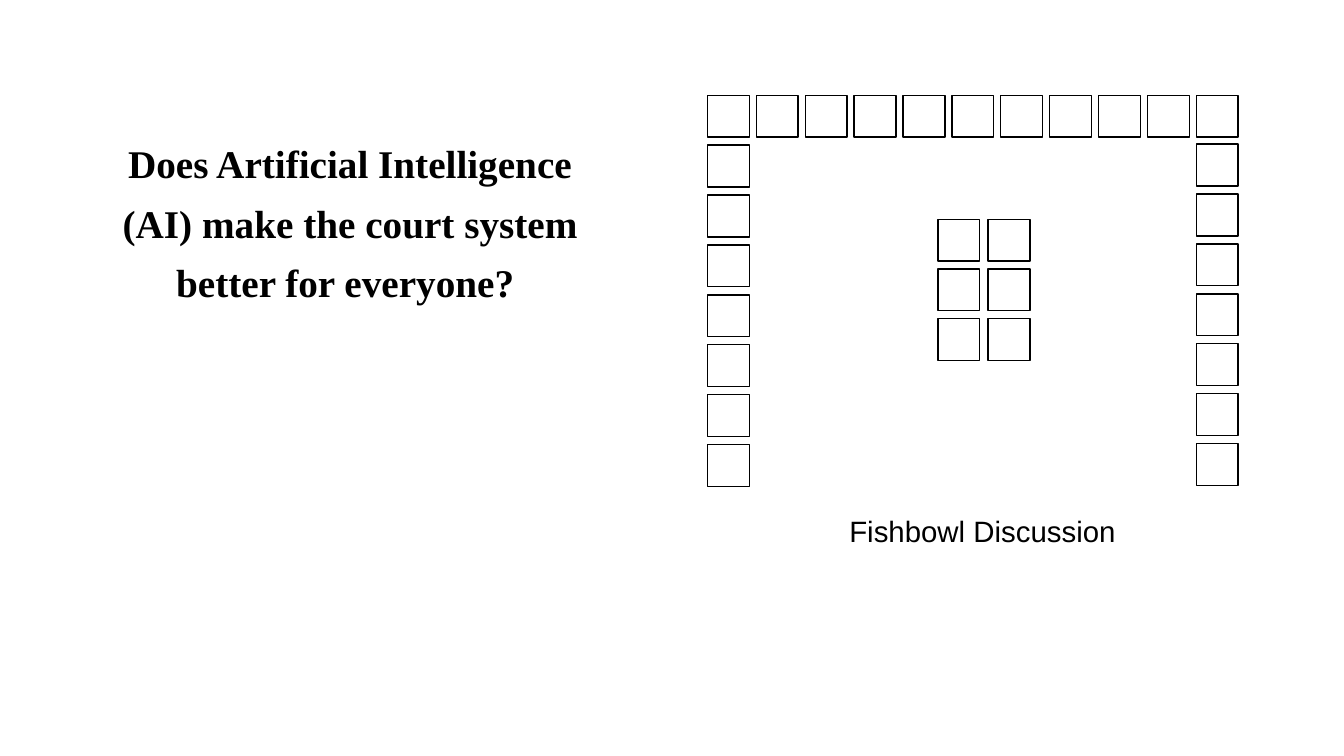
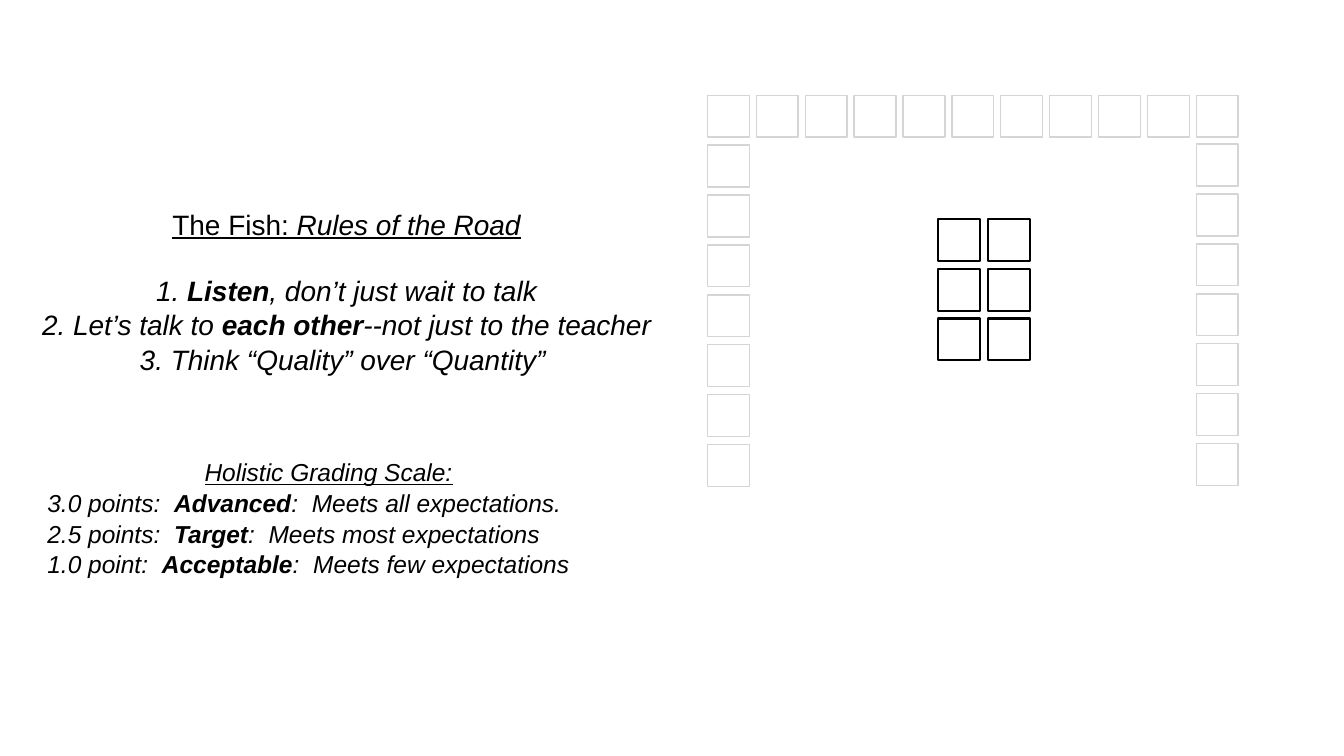
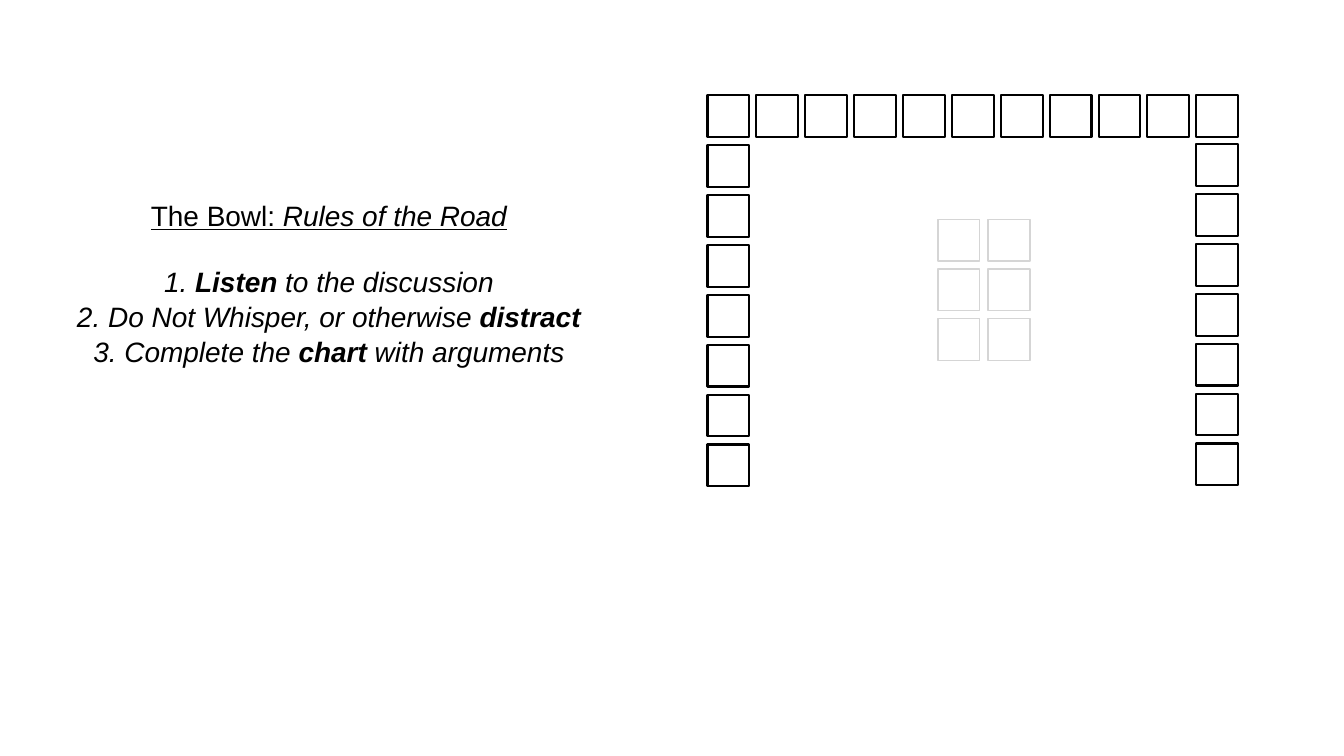
from dataclasses import dataclass
from itertools import product

from lxml.etree import SubElement
from pptx import Presentation
from pptx.dml.color import RGBColor
from pptx.enum.shapes import MSO_SHAPE
from pptx.enum.text import MSO_ANCHOR, MSO_AUTO_SIZE, PP_ALIGN
from pptx.oxml.ns import qn
from pptx.util import Inches, Pt


@dataclass(frozen=True)
class Theme:
    ink: RGBColor = RGBColor.from_string("000000")
    pale: RGBColor = RGBColor.from_string("D5D5D5")
    paper: RGBColor = RGBColor.from_string("FFFFFF")
    sans: str = "Arial"
    serif: str = "Times New Roman"
    ask: Pt = Pt(56)
    label: Pt = Pt(42)
    rule: Pt = Pt(40)
    grade: Pt = Pt(35)
    thin: Pt = Pt(2)
    thick: Pt = Pt(3)
    lead: float = 1.04


SEAT = 0.83
STEP = 0.97
ROW = 0.99
LEFT, TOP = 14.04, 1.89
RIGHT = LEFT + 10 * STEP

BOWL = (
    [(LEFT + STEP * i, TOP) for i in range(11)]
    + [(LEFT, TOP + ROW * i) for i in range(1, 8)]
    + [(RIGHT, TOP + STEP + ROW * i) for i in range(7)]
)
FISH = [(18.61 + c, 4.35 + 0.985 * r) for c, r in product(range(2), range(3))]

FLAGS = {"b": "bold", "i": "italic", "u": "underline"}


def apply(item, values):
    for name, value in values.items():
        setattr(item, name, value)


class Deck:
    def __init__(self, theme):
        self.theme = theme
        self.file = Presentation()
        apply(self.file, {"slide_width": Inches(26.67), "slide_height": Inches(15)})
        self.slide = None

    def page(self, layout):
        self.slide = self.file.slides.add_slide(self.file.slide_layouts.get_by_name(layout))

    def fill(self, shape, box, lines, size, font=None, lead=None, align=PP_ALIGN.CENTER, wrap=True):
        names = ("left", "top", "width", "height")
        apply(shape, dict(zip(names, map(Inches, box))))
        frame = shape.text_frame
        pad = Inches(0.06)
        apply(frame, {
            "word_wrap": wrap, "auto_size": MSO_AUTO_SIZE.NONE,
            "vertical_anchor": MSO_ANCHOR.MIDDLE,
            "margin_left": pad, "margin_right": pad,
            "margin_top": pad, "margin_bottom": pad,
        })
        for i, line in enumerate(lines):
            para = frame.add_paragraph() if i else frame.paragraphs[0]
            apply(para, {
                "alignment": align, "space_before": Pt(0),
                "line_spacing": lead or self.theme.lead,
            })
            for text, flags in line:
                run = para.add_run()
                run.text = text
                apply(run.font, {"name": font or self.theme.sans, "size": size})
                apply(run.font, {name: key in flags for key, name in FLAGS.items()})
                run.font.color.rgb = self.theme.ink
        return frame

    def title(self, box, line, size, **look):
        self.fill(self.slide.shapes.title, box, [line], size, **look)

    def list(self, box, lines, size):
        frame = self.fill(self.slide.placeholders[1], box, lines, size)
        for para in frame.paragraphs:
            props = para._p.get_or_add_pPr()
            for name in ("marL", "indent"):
                props.set(name, "0")
            SubElement(props, qn("a:buNone"))

    def text(self, box, lines, size, **look):
        shape = self.slide.shapes.add_textbox(*map(Inches, box))
        return self.fill(shape, box, lines, size, **look)

    def rules(self, left, mid, width, name, lines):
        size = self.theme.rule
        head = [(name, "u"), ("Rules of the Road", "iu")]
        self.title((left, mid - 0.4, width, 0.8), head, size)
        self.list((left, mid + 0.94, width, 2.12), lines, size)

    def seats(self, spots, color, width):
        for x, y in spots:
            seat = self.slide.shapes.add_shape(
                MSO_SHAPE.RECTANGLE, *map(Inches, (x, y, SEAT, SEAT)))
            seat.shadow.inherit = False
            seat.fill.solid()
            seat.fill.fore_color.rgb = self.theme.paper
            seat.line.color.rgb = color
            seat.line.width = width


def main():
    theme = Theme()
    deck = Deck(theme)
    plain = (theme.ink, theme.thin)
    faded = (theme.pale, theme.thin)
    strong = (theme.ink, theme.thick)

    deck.page("Title Only")
    deck.title(
        (1.97, 2.92, 9.96, 2.74),
        [("Does Artificial Intelligence (AI) make the court system better for everyone? ", "b")],
        theme.ask, font=theme.serif, lead=Pt(85))
    deck.text((16.79, 10.12, 5.41, 0.81), [[("Fishbowl Discussion", "")]], theme.label, wrap=False)
    deck.seats(BOWL + FISH, *plain)

    deck.page("Title and Content")
    deck.rules(0.53, 4.43, 12.69, "The Fish: ", [
        [("1. ", "i"), ("Listen", "bi"), (", don’t just wait to talk", "i")],
        [("2. Let’s talk to ", "i"), ("each other", "bi"), ("--not just to the teacher", "i")],
        [("3. Think “Quality” over “Quantity” ", "i")],
    ])
    grades = [
        ("3.0 points:  ", "Advanced", ":  Meets all expectations."),
        ("2.5 points:  ", "Target", ":  Meets most expectations"),
        ("1.0 point:  ", "Acceptable", ":  Meets few expectations"),
    ]
    scale = [[("Holistic Grading Scale:", "iu")]]
    scale += [list(zip(parts, ("i", "bi", "i"))) for parts in grades]
    frame = deck.text((0.88, 8.75, 11.28, 3.03), scale, theme.grade, align=PP_ALIGN.LEFT)
    frame.paragraphs[0].alignment = PP_ALIGN.CENTER
    deck.seats(BOWL, *faded)
    deck.seats(FISH, *strong)

    deck.page("Title and Content")
    deck.rules(1.46, 4.26, 10.13, "The Bowl: ", [
        [("1. ", "i"), ("Listen", "bi"), (" to the discussion", "i")],
        [("2. Do Not Whisper, or otherwise ", "i"), ("distract", "bi")],
        [("3. Complete the ", "i"), ("chart", "bi"), (" with arguments", "i")],
    ])
    deck.seats(BOWL, *strong)
    deck.seats(FISH, *faded)

    deck.file.save("out.pptx")


if __name__ == "__main__":
    main()
